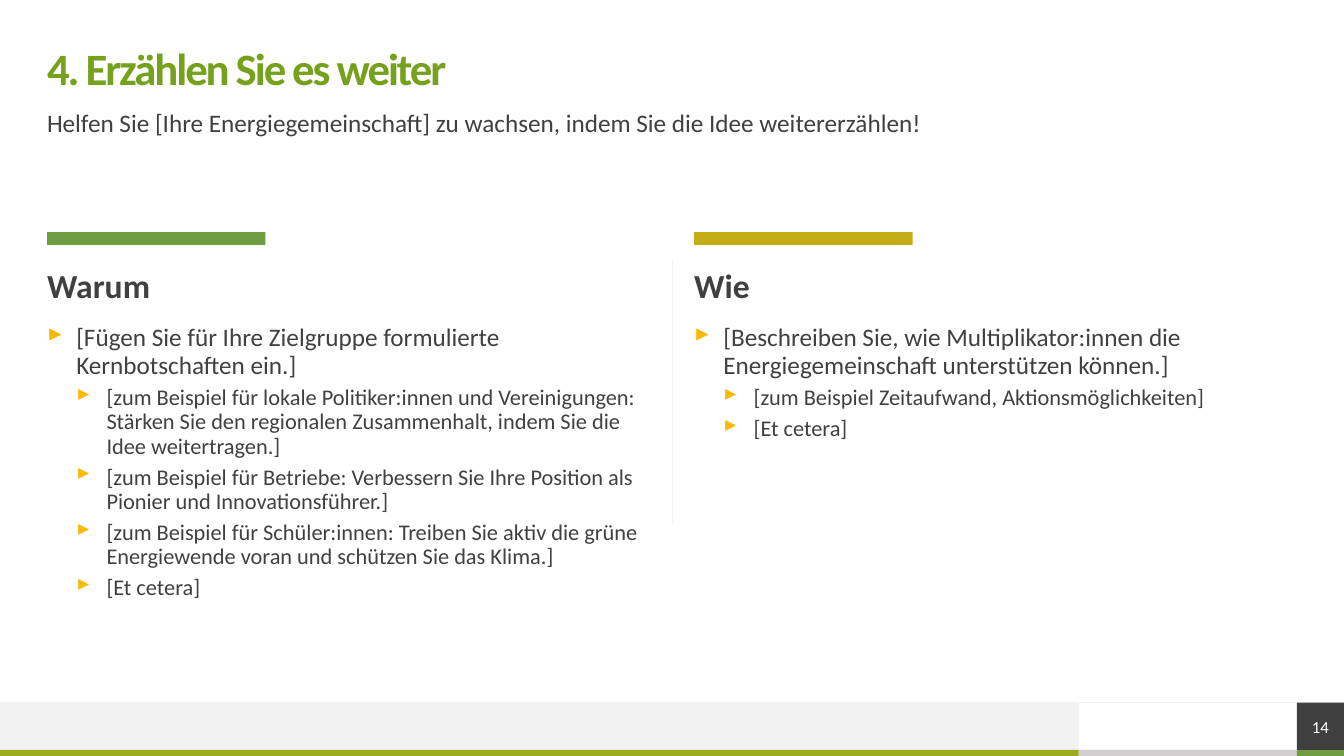
from dataclasses import dataclass

import lxml.etree
import pptx
import pptx.dml.color
import pptx.enum.shapes
import pptx.enum.text
import pptx.oxml.ns
import pptx.util

RGBColor = pptx.dml.color.RGBColor
DARK = RGBColor(0x40, 0x40, 0x40)
WHITE = RGBColor(0xFF, 0xFF, 0xFF)
PALE = RGBColor(0xF2, 0xF2, 0xF2)
SILVER = RGBColor(0xD0, 0xCE, 0xCE)
TITLE_GREEN = RGBColor(0x75, 0xA1, 0x1D)
LEAF = RGBColor(0x6D, 0x9D, 0x40)
OLIVE = RGBColor(0x9C, 0xAA, 0x20)
GOLD = RGBColor(0xC3, 0xAD, 0x16)
AMBER = RGBColor(0xFB, 0xB8, 0x04)

FONT = "Calibri"
WIDTH = pptx.util.Inches(13.333)
HEIGHT = pptx.util.Inches(7.5)

MARGIN = 3.5
CONTENT_WIDTH = 100 - 2 * MARGIN
COLUMN_WIDTH = 44.85
BAR_WIDTH = 16.25
RIGHT_EDGE = 100 - MARGIN
FOOTER_SPLIT = RIGHT_EDGE - BAR_WIDTH
STRIPE_HEIGHT = 0.8
STRIPE_TOP = 100 - STRIPE_HEIGHT
FOOTER_HEIGHT = 6.25
FOOTER_TOP = STRIPE_TOP - FOOTER_HEIGHT


@dataclass(frozen=True)
class Area:
    """Left, top, width and height in percent of the slide's size."""
    left: float
    top: float
    width: float
    height: float

    def box(self) -> tuple[int, int, int, int]:
        return (across(self.left), down(self.top), across(self.width), down(self.height))


@dataclass(frozen=True)
class Style:
    size: float
    color: RGBColor = DARK
    bold: bool = False
    spacing: int = 0


@dataclass(frozen=True)
class Level:
    style: Style
    margin: float
    hanging: float
    space_before: float


@dataclass(frozen=True)
class Column:
    left: float
    color: RGBColor
    heading: str
    message: str
    examples: tuple[str, ...]


TITLE = Style(32, TITLE_GREEN, True, -150)
BODY = Style(18)
HEADING = Style(24, bold=True)
PAGE_NUMBER = Style(12, WHITE)
MESSAGE_LEVEL = Level(BODY, 0.29, 0.29, 10)
EXAMPLE_LEVEL = Level(Style(16), 0.59, 0.3, 5)

FOOTER = (
    (Area(FOOTER_SPLIT, STRIPE_TOP, BAR_WIDTH, STRIPE_HEIGHT), SILVER),
    (Area(0, FOOTER_TOP, FOOTER_SPLIT, FOOTER_HEIGHT), PALE),
    (Area(0, STRIPE_TOP, FOOTER_SPLIT, STRIPE_HEIGHT), OLIVE),
    (Area(RIGHT_EDGE, STRIPE_TOP, MARGIN, STRIPE_HEIGHT), LEAF),
)

COLUMNS = (
    Column(
        MARGIN, LEAF, "Warum",
        "[Fügen Sie für Ihre Zielgruppe formulierte Kernbotschaften ein.]",
        (
            "[zum Beispiel für lokale Politiker:innen und Vereinigungen: "
            "Stärken Sie den regionalen Zusammenhalt, indem Sie die Idee weitertragen.]",
            "[zum Beispiel für Betriebe: Verbessern Sie Ihre Position als "
            "Pionier und Innovationsführer.]",
            "[zum Beispiel für Schüler:innen: Treiben Sie aktiv die grüne "
            "Energiewende voran und schützen Sie das Klima.]",
            "[Et cetera]",
        ),
    ),
    Column(
        RIGHT_EDGE - COLUMN_WIDTH, GOLD, "Wie",
        "[Beschreiben Sie, wie Multiplikator:innen die "
        "Energiegemeinschaft unterstützen können.]",
        ("[zum Beispiel Zeitaufwand, Aktionsmöglichkeiten]", "[Et cetera]"),
    ),
)


def across(share: float) -> int:
    return round(WIDTH * share / 100)


def down(share: float) -> int:
    return round(HEIGHT * share / 100)


def add_block(slide, area: Area, color: RGBColor):
    shape = slide.shapes.add_shape(pptx.enum.shapes.MSO_SHAPE.RECTANGLE, *area.box())
    shape.shadow.inherit = False
    shape.fill.solid()
    shape.fill.fore_color.rgb = color
    shape.line.fill.background()
    return shape


def add_rule(slide, start: tuple[float, float], end: tuple[float, float]) -> None:
    connector = slide.shapes.add_connector(
        pptx.enum.shapes.MSO_CONNECTOR.STRAIGHT,
        across(start[0]), down(start[1]), across(end[0]), down(end[1]))
    connector.line.color.rgb = PALE
    connector.line.width = pptx.util.Pt(0.5)
    lxml.etree.SubElement(connector.element.spPr, pptx.oxml.ns.qn("a:effectLst"))


def prepare_frame(shape, anchor):
    frame = shape.text_frame
    frame.word_wrap = True
    frame.vertical_anchor = anchor
    frame.margin_left = frame.margin_top = frame.margin_right = frame.margin_bottom = 0
    return frame


def write(paragraph, text: str, style: Style) -> None:
    paragraph.text = text
    paragraph.line_spacing = 0.9
    for run in paragraph.runs:
        run.font.name = FONT
        run.font.size = pptx.util.Pt(style.size)
        run.font.bold = style.bold
        run.font.color.rgb = style.color
        if style.spacing:
            run.font._element.set("spc", str(style.spacing))


def add_text(slide, area: Area, text: str, style: Style,
             anchor=pptx.enum.text.MSO_ANCHOR.TOP) -> None:
    frame = prepare_frame(slide.shapes.add_textbox(*area.box()), anchor)
    write(frame.paragraphs[0], text, style)


def add_bullet(paragraph, level: Level) -> None:
    qn = pptx.oxml.ns.qn
    properties = paragraph._p.get_or_add_pPr()
    properties.set("marL", str(pptx.util.Inches(level.margin)))
    properties.set("indent", str(-pptx.util.Inches(level.hanging)))
    color = lxml.etree.SubElement(properties, qn("a:buClr"))
    lxml.etree.SubElement(color, qn("a:srgbClr"), val=str(AMBER))
    lxml.etree.SubElement(properties, qn("a:buChar"), char="▸")


def add_list(slide, area: Area, column: Column) -> None:
    frame = prepare_frame(slide.shapes.add_textbox(*area.box()), pptx.enum.text.MSO_ANCHOR.TOP)
    items = [(column.message, MESSAGE_LEVEL)]
    items += [(example, EXAMPLE_LEVEL) for example in column.examples]
    for index, (text, level) in enumerate(items):
        paragraph = frame.add_paragraph() if index else frame.paragraphs[0]
        paragraph.level = int(level is EXAMPLE_LEVEL)
        add_bullet(paragraph, level)
        write(paragraph, text, level.style)
        if index:
            paragraph.space_before = pptx.util.Pt(level.space_before)


def add_column(slide, column: Column) -> None:
    add_block(slide, Area(column.left, 30.7, BAR_WIDTH, 1.7), column.color)
    add_text(slide, Area(column.left, 35.6, COLUMN_WIDTH, 5.2), column.heading, HEADING)
    add_list(slide, Area(column.left, 43, COLUMN_WIDTH, 32), column)


def main() -> None:
    presentation = pptx.Presentation()
    presentation.slide_width = WIDTH
    presentation.slide_height = HEIGHT
    slide = presentation.slides.add_slide(presentation.slide_layouts[6])
    middle = pptx.enum.text.MSO_ANCHOR.MIDDLE

    for area, color in FOOTER:
        add_block(slide, area, color)
    add_rule(slide, (100, FOOTER_TOP), (0, FOOTER_TOP))
    add_text(slide, Area(MARGIN, 6.25, CONTENT_WIDTH, 6.25),
             "4. Erzählen Sie es weiter", TITLE, middle)
    add_text(slide, Area(MARGIN, 14.7, CONTENT_WIDTH, 5.2),
             "Helfen Sie [Ihre Energiegemeinschaft] zu wachsen, "
             "indem Sie die Idee weitererzählen!", BODY)
    for column in COLUMNS:
        add_column(slide, column)
    add_rule(slide, (50, 34.4), (50, 69.6))

    badge = add_block(slide, Area(RIGHT_EDGE, FOOTER_TOP, MARGIN, FOOTER_HEIGHT), DARK)
    number = prepare_frame(badge, middle).paragraphs[0]
    write(number, "14", PAGE_NUMBER)
    number.line_spacing = 1.0
    number.alignment = pptx.enum.text.PP_ALIGN.CENTER

    presentation.save("out.pptx")


if __name__ == "__main__":
    main()
